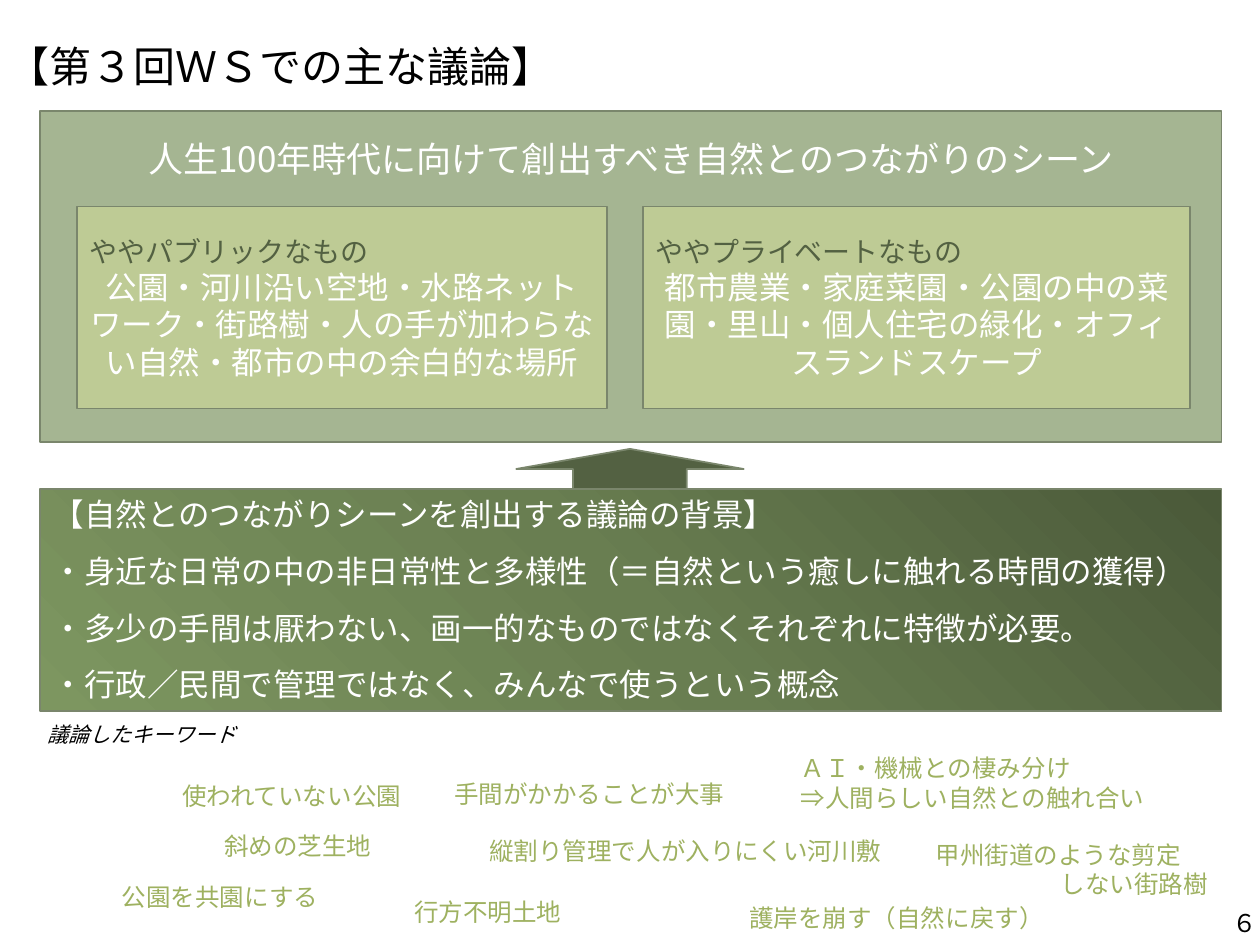
from copy import deepcopy

from lxml import etree
from pptx import Presentation
from pptx.dml.color import RGBColor
from pptx.enum import shapes as s, text as t
from pptx.oxml.ns import qn
from pptx.util import Pt

FONT = "Noto Sans CJK JP"
BLACK = RGBColor(0x00, 0x00, 0x00)
WHITE = RGBColor(0xFF, 0xFF, 0xFF)
SAGE = RGBColor(0xA5, 0xB5, 0x92)
LIME = RGBColor(0xBE, 0xCB, 0x95)
MOSS = RGBColor(0x53, 0x61, 0x42)
EDGE = RGBColor(0x7A, 0x86, 0x6C)
LEAF = RGBColor(0x9E, 0xB1, 0x60)
DEEP = RGBColor(0x4A, 0x59, 0x39)
MID = RGBColor(0x69, 0x7E, 0x51)
PALE = RGBColor(0x7D, 0x96, 0x60)

LEFT, RIGHT, CENTER = t.PP_ALIGN.LEFT, t.PP_ALIGN.RIGHT, t.PP_ALIGN.CENTER
TOP, MIDDLE = t.MSO_ANCHOR.TOP, t.MSO_ANCHOR.MIDDLE
RECT, ARROW = s.MSO_SHAPE.RECTANGLE, s.MSO_SHAPE.UP_ARROW


def write(frame, words, size=14, color=LEAF, align=LEFT, italic=False, space=None):
    first = frame.paragraphs[0]
    para = frame.add_paragraph() if first.runs else first
    para.alignment = align
    para.line_spacing = space
    run = para.add_run()
    run.text = words
    font = run.font
    font.name, font.size, font.italic = FONT, Pt(size), italic
    font.color.rgb = color
    east = etree.SubElement(run._r.get_or_add_rPr(), qn("a:ea"))
    east.set("typeface", FONT)


class Page:
    def __init__(self, deck):
        self.slide = deck.slides.add_slide(deck.slide_layouts[6])

    def label(self, x, y, wide, high, *lines, wrap=False, **style):
        box = self.slide.shapes.add_textbox(Pt(x), Pt(y), Pt(wide), Pt(high))
        frame = box.text_frame
        frame.word_wrap = wrap
        frame.auto_size = t.MSO_AUTO_SIZE.SHAPE_TO_FIT_TEXT
        for line in lines:
            write(frame, line, **style)
        return frame

    def panel(self, x, y, wide, high, fill, kind=RECT, anchor=TOP):
        shape = self.slide.shapes.add_shape(kind, Pt(x), Pt(y), Pt(wide), Pt(high))
        shape.shadow.inherit = False
        shape.line.color.rgb = EDGE
        shape.line.width = Pt(1)
        if isinstance(fill, list):
            self.blend(shape.fill, fill)
        else:
            shape.fill.solid()
            shape.fill.fore_color.rgb = fill
        shape.text_frame.word_wrap = True
        shape.text_frame.vertical_anchor = anchor
        return shape.text_frame

    def blend(self, fill, colors):
        fill.gradient()
        fill.gradient_angle = 225
        stops = fill.gradient_stops
        last = stops[-1]._gs
        for _ in colors[2:]:
            last.addprevious(deepcopy(last))
        for i, (stop, color) in enumerate(zip(fill.gradient_stops, colors)):
            stop.position = i / (len(colors) - 1)
            stop.color.rgb = color

    def card(self, x, wide, title, body):
        frame = self.panel(x, 118, wide, 115.5, LIME, anchor=MIDDLE)
        write(frame, title, size=16, color=MOSS)
        write(frame, body, size=18, color=WHITE, align=CENTER)


def main():
    deck = Presentation()
    deck.slide_width, deck.slide_height = Pt(720), Pt(540)
    page = Page(deck)

    page.label(-3, 19.5, 330, 36, "【第３回ＷＳでの主な議論】", size=24, color=BLACK)

    scene = page.panel(23, 63.5, 675, 189, SAGE)
    scene.margin_top = Pt(15)
    write(scene, "人生100年時代に向けて創出すべき自然とのつながりのシーン",
          size=20, color=WHITE, align=CENTER)
    page.card(44, 303, "ややパブリックなもの",
              "公園・河川沿い空地・水路ネットワーク・街路樹・人の手が加わらない自然・都市の中の余白的な場所")
    page.card(367.5, 312.5, "ややプライベートなもの",
              "都市農業・家庭菜園・公園の中の菜園・里山・個人住宅の緑化・オフィスランドスケープ")

    page.panel(295, 256.5, 130, 23, MOSS, kind=ARROW)
    base = page.panel(23, 279.5, 675, 127, [DEEP, MID, PALE])
    write(base, "【自然とのつながりシーンを創出する議論の背景】", size=18, color=WHITE)
    for point in (
        "・身近な日常の中の非日常性と多様性（＝自然という癒しに触れる時間の獲得）",
        "・多少の手間は厭わない、画一的なものではなくそれぞれに特徴が必要。",
        "・行政／民間で管理ではなく、みんなで使うという概念",
    ):
        write(base, point, size=18, color=WHITE, space=1.5)

    page.label(20, 409, 124, 22, "議論したキーワード", size=12, color=BLACK, italic=True)
    for x, y, wide, *lines in (
        (97, 443, 142, "使われていない公園"),
        (252.5, 441.5, 170, "手間がかかることが大事"),
        (450.5, 427, 212, "ＡＩ・機械との棲み分け", "⇒人間らしい自然との触れ合い"),
        (121, 471.5, 99, "斜めの芝生地"),
        (272.5, 474, 240, "縦割り管理で人が入りにくい河川敷"),
        (62.5, 500.5, 127, "公園を共園にする"),
        (229.5, 509, 99, "行方不明土地"),
        (421, 512.5, 184, "護岸を崩す（自然に戻す）"),
    ):
        page.label(x, y, wide, 8 + 16.5 * len(lines), *lines)
    street = page.label(527.5, 476.5, 170, 41, "甲州街道のような剪定", wrap=True)
    write(street, "しない街路樹", align=RIGHT)

    page.label(697.5, 515.5, 22.5, 24.5, "６", wrap=True, color=BLACK, align=CENTER)
    deck.save("out.pptx")


if __name__ == "__main__":
    main()
